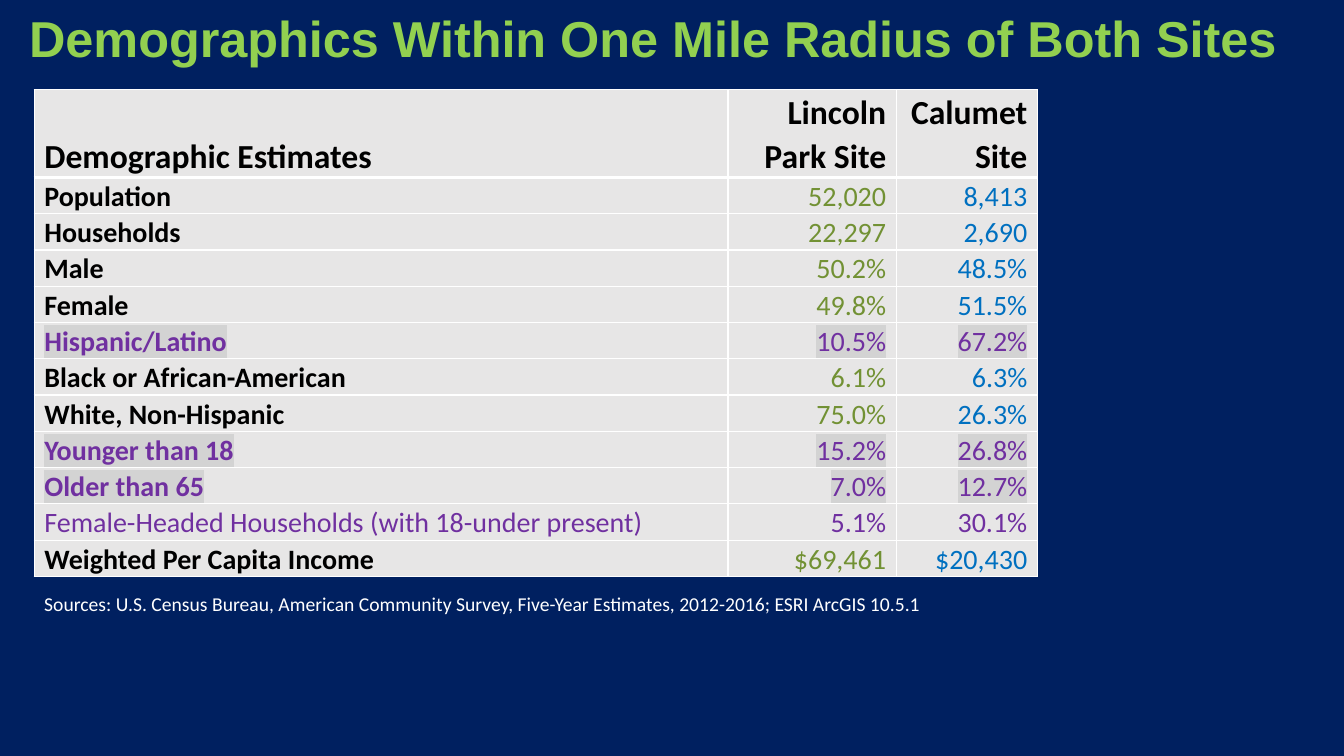
from dataclasses import dataclass

from lxml import etree
from pptx import Presentation
from pptx.dml.color import RGBColor
from pptx.enum.text import MSO_ANCHOR, PP_ALIGN
from pptx.oxml.ns import qn
from pptx.util import Inches, Pt

LEFT, RIGHT = PP_ALIGN.LEFT, PP_ALIGN.RIGHT
MIDDLE, BOTTOM = MSO_ANCHOR.MIDDLE, MSO_ANCHOR.BOTTOM

COLORS = {
    "navy": "002060",
    "lime": "92D050",
    "white": "FFFFFF",
    "black": "000000",
    "cell": "E7E6E6",
    "lincoln": "729134",
    "calumet": "0070C0",
    "purple": "7030A0",
    "highlight": "D3D3D3",
}
COLUMN_WIDTHS = (6.88, 1.67, 1.4)
HEADER_HEIGHT, ROW_HEIGHT = 0.87, 0.36
THIN, THICK = 1, 3


@dataclass(frozen=True)
class Style:
    size: int
    color: str
    bold: bool = False
    font: str = "Calibri"
    highlighted: bool = False
    align: PP_ALIGN = LEFT
    line_spacing: float = 1.0


@dataclass(frozen=True)
class Estimate:
    label: str
    lincoln: str
    calumet: str
    purple: bool = False
    highlighted: bool = False


HEADER = ("Demographic Estimates", "Lincoln Park Site", "Calumet Site")
ESTIMATES = (
    Estimate("Population", "52,020", "8,413"),
    Estimate("Households", "22,297", "2,690"),
    Estimate("Male", "50.2%", "48.5%"),
    Estimate("Female", "49.8%", "51.5%"),
    Estimate("Hispanic/Latino", "10.5%", "67.2%", True, True),
    Estimate("Black or African-American", "6.1%", "6.3%"),
    Estimate("White, Non-Hispanic", "75.0%", "26.3%"),
    Estimate("Younger than 18", "15.2%", "26.8%", True, True),
    Estimate("Older than 65", "7.0%", "12.7%", True, True),
    Estimate("Female-Headed Households (with 18-under present)", "5.1%", "30.1%", True),
    Estimate("Weighted Per Capita Income", "$69,461", "$20,430"),
)


def rgb(name: str) -> RGBColor:
    return RGBColor.from_string(COLORS[name])


def write(frame, text: str, style: Style) -> None:
    frame.text = text
    paragraph = frame.paragraphs[0]
    paragraph.alignment = style.align
    paragraph.line_spacing = style.line_spacing
    run = paragraph.runs[0]
    run.font.size = Pt(style.size)
    run.font.name = style.font
    run.font.bold = style.bold
    run.font.color.rgb = rgb(style.color)
    if style.highlighted:
        highlight = etree.Element(qn("a:highlight"))
        etree.SubElement(highlight, qn("a:srgbClr"), val=COLORS["highlight"])
        run.font._element.find(qn("a:solidFill")).addnext(highlight)


def add_text(slide, left: float, top: float, width: float, height: float,
             text: str, style: Style, anchor: MSO_ANCHOR) -> None:
    frame = slide.shapes.add_textbox(
        Inches(left), Inches(top), Inches(width), Inches(height)).text_frame
    frame.word_wrap = True
    frame.vertical_anchor = anchor
    write(frame, text, style)


def set_borders(cell, top: int, bottom: int) -> None:
    properties = cell._tc.get_or_add_tcPr()
    widths = {"a:lnL": THIN, "a:lnR": THIN, "a:lnT": top, "a:lnB": bottom}
    for position, (tag, width) in enumerate(widths.items()):
        line = etree.Element(qn(tag), w=str(Pt(width)))
        fill = etree.SubElement(line, qn("a:solidFill"))
        etree.SubElement(fill, qn("a:srgbClr"), val=COLORS["white"])
        properties.insert(position, line)


def fill_cell(cell, text: str, style: Style, top: int, bottom: int) -> None:
    cell.fill.solid()
    cell.fill.fore_color.rgb = rgb("cell")
    cell.margin_left = cell.margin_right = Inches(0.1)
    cell.margin_top = cell.margin_bottom = Inches(0)
    cell.vertical_anchor = BOTTOM
    write(cell.text_frame, text, style)
    set_borders(cell, top, bottom)


def estimate_style(estimate: Estimate, column: int) -> Style:
    color = "purple" if estimate.purple else ("black", "lincoln", "calumet")[column]
    plain_label = estimate.purple and not estimate.highlighted
    return Style(20, color, bold=column == 0 and not plain_label,
                 highlighted=estimate.highlighted,
                 align=RIGHT if column else LEFT, line_spacing=1.07)


def add_estimates(slide) -> None:
    height = HEADER_HEIGHT + ROW_HEIGHT * len(ESTIMATES)
    table = slide.shapes.add_table(
        len(ESTIMATES) + 1, len(HEADER), Inches(0.34), Inches(0.89),
        Inches(sum(COLUMN_WIDTHS)), Inches(height)).table
    table.horz_banding = False
    for column, width in zip(table.columns, COLUMN_WIDTHS):
        column.width = Inches(width)
    for index, row in enumerate(table.rows):
        row.height = Inches(ROW_HEIGHT if index else HEADER_HEIGHT)

    for column, heading in enumerate(HEADER):
        style = Style(24, "black", bold=True,
                      align=RIGHT if column else LEFT, line_spacing=1.07)
        fill_cell(table.cell(0, column), heading, style, THIN, THICK)

    for row, estimate in enumerate(ESTIMATES, start=1):
        values = (estimate.label, estimate.lincoln, estimate.calumet)
        for column, value in enumerate(values):
            fill_cell(table.cell(row, column), value, estimate_style(estimate, column),
                      THICK if row == 1 else THIN, THIN)


def main() -> None:
    presentation = Presentation()
    presentation.slide_width = Inches(13.33)
    presentation.slide_height = Inches(7.5)
    slide = presentation.slides.add_slide(presentation.slide_layouts[6])
    slide.background.fill.solid()
    slide.background.fill.fore_color.rgb = rgb("navy")

    # Title
    add_text(slide, 0.19, 0.07, 13.14, 0.67,
             "Demographics Within One Mile Radius of Both Sites",
             Style(36, "lime", bold=True, font="Arial", line_spacing=0.9), MIDDLE)

    # Demographic table
    add_estimates(slide)

    # Sources
    add_text(slide, 0.34, 5.82, 10.04, 0.34,
             "Sources: U.S. Census Bureau, American Community Survey, "
             "Five-Year Estimates, 2012-2016; ESRI ArcGIS 10.5.1",
             Style(14, "white"), MSO_ANCHOR.TOP)

    presentation.save("out.pptx")


if __name__ == "__main__":
    main()
